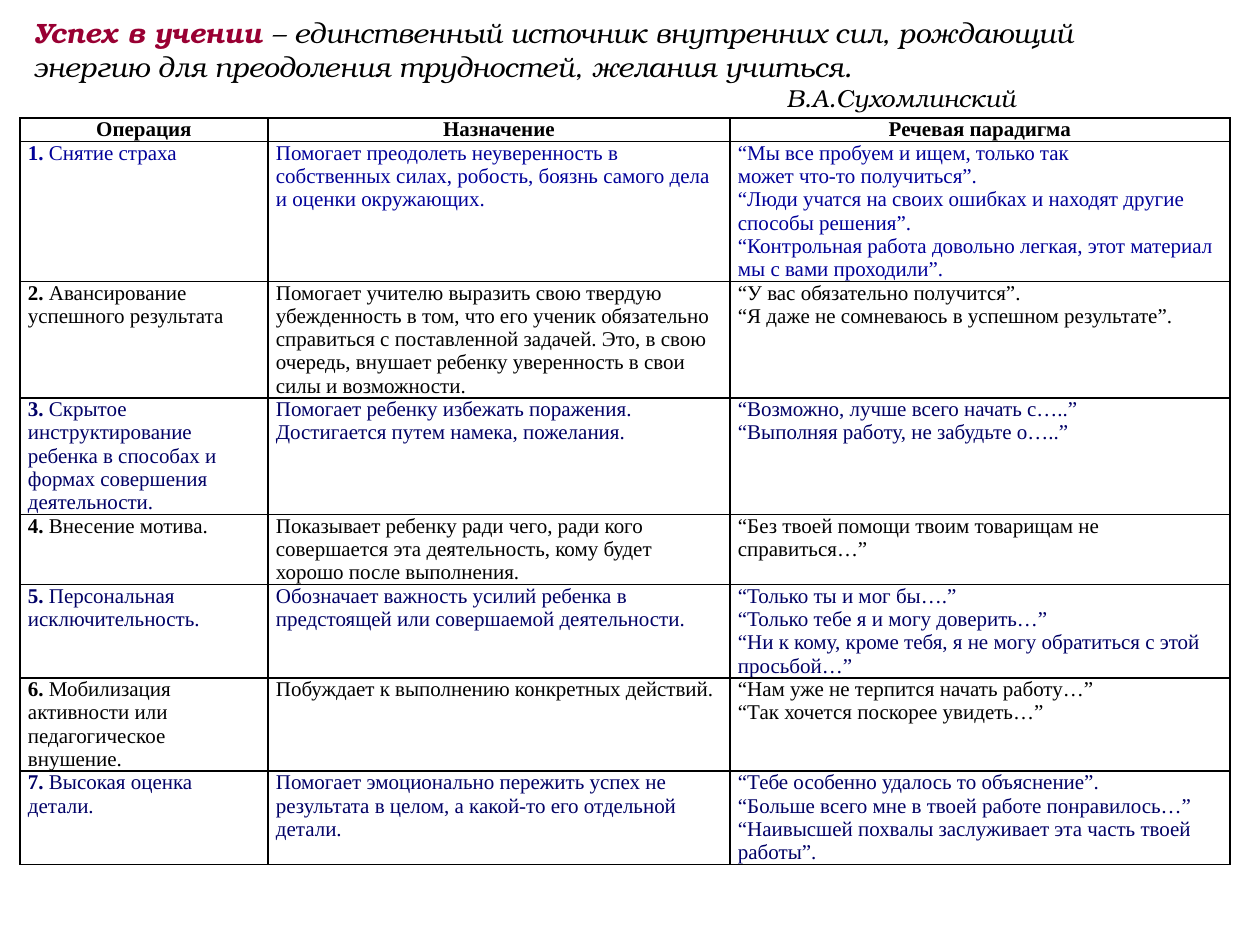
from lxml import etree
from pptx import Presentation
from pptx import util as u
from pptx.dml.color import RGBColor
from pptx.enum import text
from pptx.oxml.ns import qn

PX = 914400 // 126
COLORS = {"black": "000000", "crimson": "990033", "blue": "000099", "navy": "000066"}
TITLE_FONT, TABLE_FONT = "TeX Gyre Bonum", "Times New Roman"
LINE_HEIGHT = 23
COLUMN_WIDTHS = [248, 462, 500]
HEADERS = ["Операция", "Назначение", "Речевая парадигма"]

# Colour, lines in the tallest cell, operation, purpose, phrases
OPERATIONS = [
    ("blue", 6, "Снятие страха",
     ["Помогает преодолеть неуверенность в собственных силах, робость, боязнь самого дела "
      "и оценки окружающих."],
     ["“Мы все пробуем и ищем, только так",
      "может что-то получиться”.",
      "“Люди учатся на своих ошибках и находят другие способы решения”.",
      "“Контрольная работа довольно легкая, этот материал мы с вами проходили”."]),
    ("black", 5, "Авансирование успешного результата",
     ["Помогает учителю выразить свою твердую убежденность в том, что его ученик обязательно "
      "справиться с поставленной задачей. Это, в свою очередь, внушает ребенку уверенность "
      "в свои силы и возможности."],
     ["“У вас обязательно получится”.",
      "“Я даже не сомневаюсь в успешном результате”."]),
    ("navy", 5, "Скрытое инструктирование ребенка в способах и формах совершения деятельности.",
     ["Помогает ребенку избежать поражения.",
      "Достигается путем намека, пожелания."],
     ["“Возможно, лучше всего начать с…..”",
      "“Выполняя работу, не забудьте о…..”"]),
    ("black", 3, "Внесение мотива.",
     ["Показывает ребенку ради чего, ради кого совершается эта деятельность, кому будет "
      "хорошо после выполнения."],
     ["“Без твоей помощи твоим товарищам не справиться…”"]),
    ("navy", 4, "Персональная исключительность.",
     ["Обозначает важность усилий ребенка в предстоящей или совершаемой деятельности."],
     ["“Только ты и мог бы….”",
      "“Только тебе я и могу доверить…”",
      "“Ни к кому, кроме тебя, я не могу обратиться с этой просьбой…”"]),
    ("black", 4, "Мобилизация активности или педагогическое внушение.",
     ["Побуждает к выполнению конкретных действий."],
     ["“Нам уже не терпится начать работу…”",
      "“Так хочется поскорее увидеть…”"]),
    ("navy", 4, "Высокая оценка детали.",
     ["Помогает эмоционально пережить успех не результата в целом, а какой-то его "
      "отдельной детали."],
     ["“Тебе особенно удалось то объяснение”.",
      "“Больше всего мне в твоей работе понравилось…”",
      "“Наивысшей похвалы заслуживает эта часть твоей работы”."]),
]


def px(length):
    return u.Emu(length * PX)


def style_font(font, name, size, color, bold=False, italic=False):
    font.name, font.size = name, u.Pt(size)
    font.bold, font.italic = bold, italic
    font.color.rgb = RGBColor.from_string(COLORS[color])


def add_runs(paragraph, *pieces):
    return [add_run(paragraph, piece) for piece in pieces]


def add_run(paragraph, words):
    run = paragraph.add_run()
    run.text = words
    return run


def fill_title(slide):
    title = slide.shapes.title
    title.left, title.top, title.width, title.height = px(20), px(10), px(1152), px(108)
    frame = title.text_frame
    frame.word_wrap = True
    frame.auto_size = text.MSO_AUTO_SIZE.NONE
    frame.vertical_anchor = text.MSO_ANCHOR.MIDDLE

    quote = frame.paragraphs[0]
    quote.alignment = text.PP_ALIGN.LEFT
    lead, rest = add_runs(
        quote, "Успех в учении ",
        "– единственный источник внутренних сил, рождающий энергию для преодоления "
        "трудностей, желания учиться.")
    style_font(lead.font, TITLE_FONT, 16, "crimson", bold=True, italic=True)
    style_font(rest.font, TITLE_FONT, 16, "black", italic=True)

    author = frame.add_paragraph()
    author.alignment = text.PP_ALIGN.LEFT
    author._p.get_or_add_pPr().set("marL", str(px(754)))
    add_run(author, "В.А.Сухомлинский")
    style_font(author.font, TITLE_FONT, 14, "black", italic=True)


def frame_cell(cell):
    """Give a cell thin black borders, no fill and tight margins."""
    cell.margin_left = cell.margin_right = px(8)
    cell.margin_top = cell.margin_bottom = 0
    properties = cell._tc.get_or_add_tcPr()
    for side in ("a:lnL", "a:lnR", "a:lnT", "a:lnB"):
        line = etree.SubElement(properties, qn(side), w=str(u.Pt(1)))
        fill = etree.SubElement(line, qn("a:solidFill"))
        etree.SubElement(fill, qn("a:srgbClr"), val=COLORS["black"])
    cell.fill.background()


def write_cell(cell, lines, color, bold=False, alignment=text.PP_ALIGN.LEFT, number=""):
    frame_cell(cell)
    frame = cell.text_frame
    for index, line in enumerate(lines):
        paragraph = frame.add_paragraph() if index else frame.paragraphs[0]
        paragraph.alignment = alignment
        style_font(paragraph.font, TABLE_FONT, 12, color, bold)
        if number:
            add_run(paragraph, number).font.bold = True
        add_run(paragraph, line)


def add_operations_table(slide):
    line_counts = [1] + [operation[1] for operation in OPERATIONS]
    table = slide.shapes.add_table(
        len(line_counts), len(HEADERS), px(20), px(118),
        px(sum(COLUMN_WIDTHS)), px(sum(line_counts) * LINE_HEIGHT)).table
    table.horz_banding = False
    for column, width in zip(table.columns, COLUMN_WIDTHS):
        column.width = px(width)
    for row, count in zip(table.rows, line_counts):
        row.height = px(count * LINE_HEIGHT)

    for column, header in enumerate(HEADERS):
        write_cell(table.cell(0, column), [header], "black", True, text.PP_ALIGN.CENTER)
    for row, (color, _, operation, purpose, phrases) in enumerate(OPERATIONS, 1):
        write_cell(table.cell(row, 0), [operation], color, number=f"{row}. ")
        write_cell(table.cell(row, 1), purpose, color)
        write_cell(table.cell(row, 2), phrases, color)


def main():
    presentation = Presentation()
    presentation.slide_width, presentation.slide_height = u.Inches(10), u.Inches(7.5)
    slide = presentation.slides.add_slide(presentation.slide_layouts[5])
    add_operations_table(slide)
    fill_title(slide)
    presentation.save("out.pptx")


if __name__ == "__main__":
    main()
